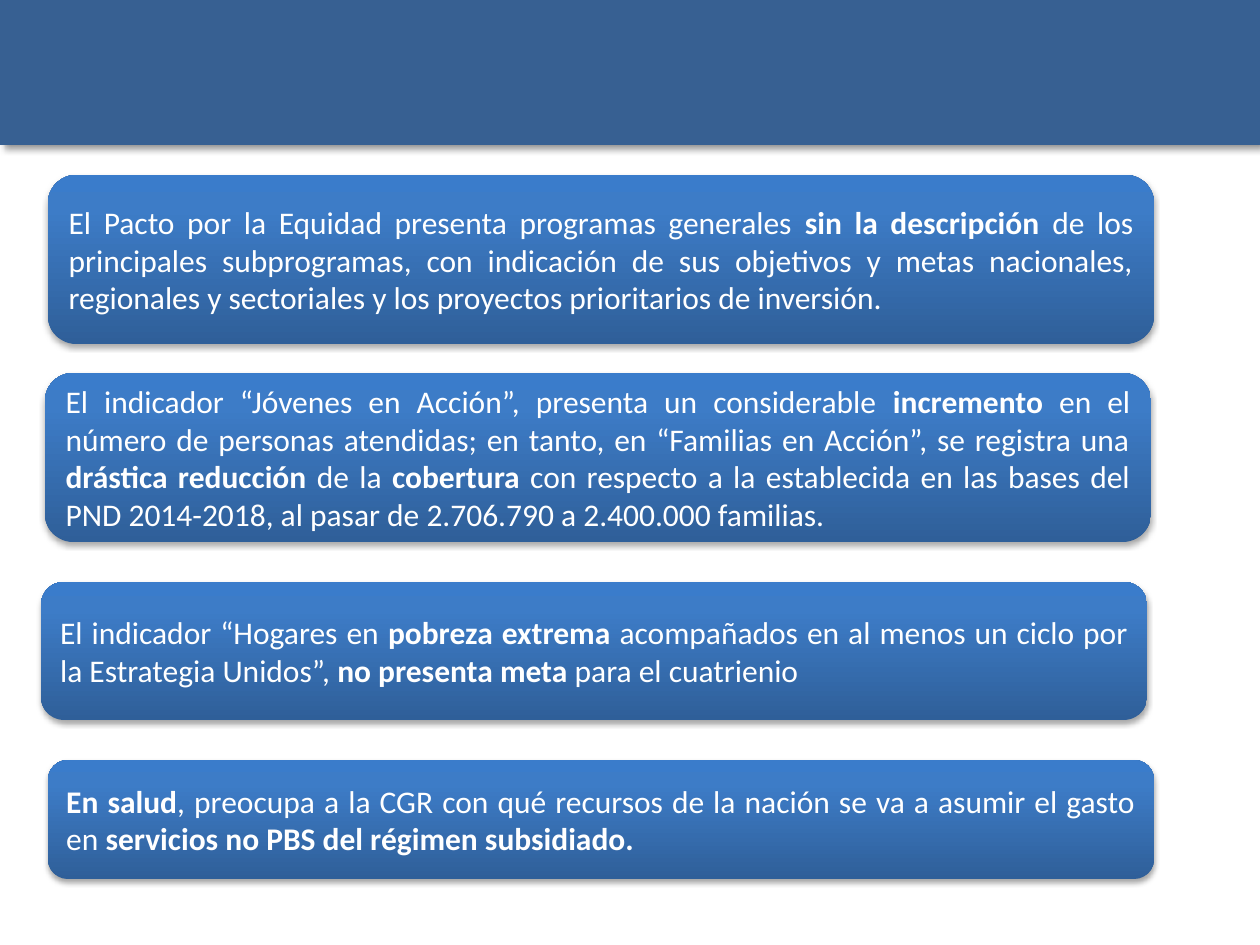
from copy import deepcopy

from lxml import etree
from pptx import Presentation
from pptx.dml.color import RGBColor
from pptx.enum.shapes import MSO_SHAPE
from pptx.enum.text import MSO_ANCHOR, PP_ALIGN
from pptx.oxml.ns import qn
from pptx.util import Emu, Pt

RECT = MSO_SHAPE.RECTANGLE
ROUND = MSO_SHAPE.ROUNDED_RECTANGLE
MIDDLE = MSO_ANCHOR.MIDDLE
JUSTIFY = PP_ALIGN.JUSTIFY

SCALE = 914400 / 126
WIDE, HIGH = 1260, 945
STOPS = ((0, "2F5F99"), (0.8, "3D7CC7"), (1, "3A7CCB"))
BAND_SHADE = {"alpha": 40, "blur": 4, "dist": 3, "angle": 45}
CARD_SHADE = {"alpha": 35, "blur": 3.1, "dist": 1.8, "angle": 90}
FONT = {"name": "Calibri", "size": Pt(18)}
CARDS = (
    ((48, 175, 1106, 169),
     "El Pacto por la Equidad presenta programas generales *sin la descripción *"
     "de los principales subprogramas, con indicación de sus objetivos y metas "
     "nacionales, regionales y sectoriales y los proyectos prioritarios de inversión."),
    ((45, 373, 1106, 169),
     "El indicador “Jóvenes en Acción”, presenta un considerable *incremento* en el "
     "número de personas atendidas; en tanto, en “Familias en Acción”, se registra "
     "una *drástica reducción *de la *cobertura* con respecto a la establecida en "
     "las bases del PND 2014-2018, al pasar de 2.706.790 a 2.400.000 familias."),
    ((41, 582, 1106, 138),
     "El indicador “Hogares en *pobreza extrema *acompañados en al menos un ciclo "
     "por la Estrategia Unidos”, *no presenta meta *para el cuatrienio"),
    ((48, 760, 1106, 119),
     "*En salud*, preocupa a la CGR con qué recursos de la nación se va a asumir "
     "el gasto en *servicios no PBS del régimen subsidiado.*"),
)


def px(size):
    return Emu(round(size * SCALE))


def color(code):
    return RGBColor.from_string(code)


def add_shade(shape, alpha, blur, dist, angle):
    shape.shadow.inherit = False
    effects = shape._element.spPr.find(qn("a:effectLst"))
    outer = etree.SubElement(
        effects, qn("a:outerShdw"), blurRad=str(Pt(blur)), dist=str(Pt(dist)),
        dir=str(angle * 60000), rotWithShape="0")
    tone = etree.SubElement(outer, qn("a:srgbClr"), val="000000")
    etree.SubElement(tone, qn("a:alpha"), val=str(alpha * 1000))


def add_box(slide, kind, box, shade):
    shape = slide.shapes.add_shape(kind, *map(px, box))
    shape.line.fill.background()
    add_shade(shape, **shade)
    return shape


def add_band(slide, box):
    band = add_box(slide, RECT, box, BAND_SHADE)
    band.fill.solid()
    band.fill.fore_color.rgb = color("376092")


def fill_blend(shape):
    fill = shape.fill
    fill.gradient()
    fill.gradient_angle = 90
    stops = shape._element.spPr.find(qn("a:gradFill")).find(qn("a:gsLst"))
    stops.append(deepcopy(stops[-1]))
    for stop, (place, code) in zip(fill.gradient_stops, STOPS):
        stop.position = place
        stop.color.rgb = color(code)


def add_card(slide, box, text):
    card = add_box(slide, ROUND, box, CARD_SHADE)
    fill_blend(card)
    frame = card.text_frame
    frame.word_wrap = True
    frame.vertical_anchor = MIDDLE
    para = frame.paragraphs[0]
    para.alignment = JUSTIFY
    for index, part in enumerate(text.split("*")):
        if not part:
            continue
        run = para.add_run()
        run.text = part
        for name, value in {**FONT, "bold": index % 2 == 1}.items():
            setattr(run.font, name, value)
        run.font.color.rgb = color("FFFFFF")


def main():
    deck = Presentation()
    deck.slide_width, deck.slide_height = px(WIDE), px(HIGH)
    slide = deck.slides.add_slide(deck.slide_layouts[6])
    add_band(slide, (0, 0, WIDE, 145))
    for box, text in CARDS:
        add_card(slide, box, text)
    deck.save("out.pptx")


if __name__ == "__main__":
    main()
